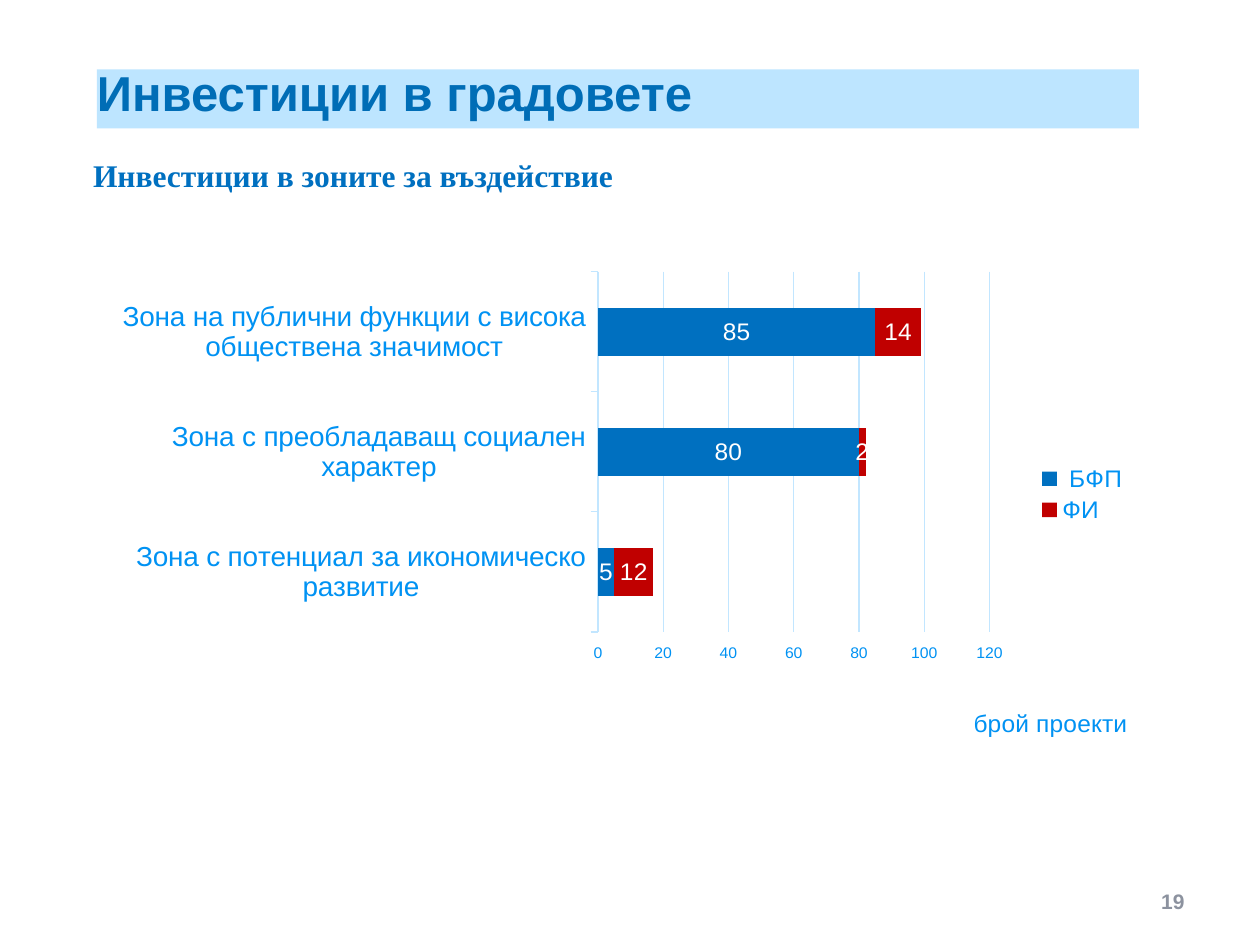
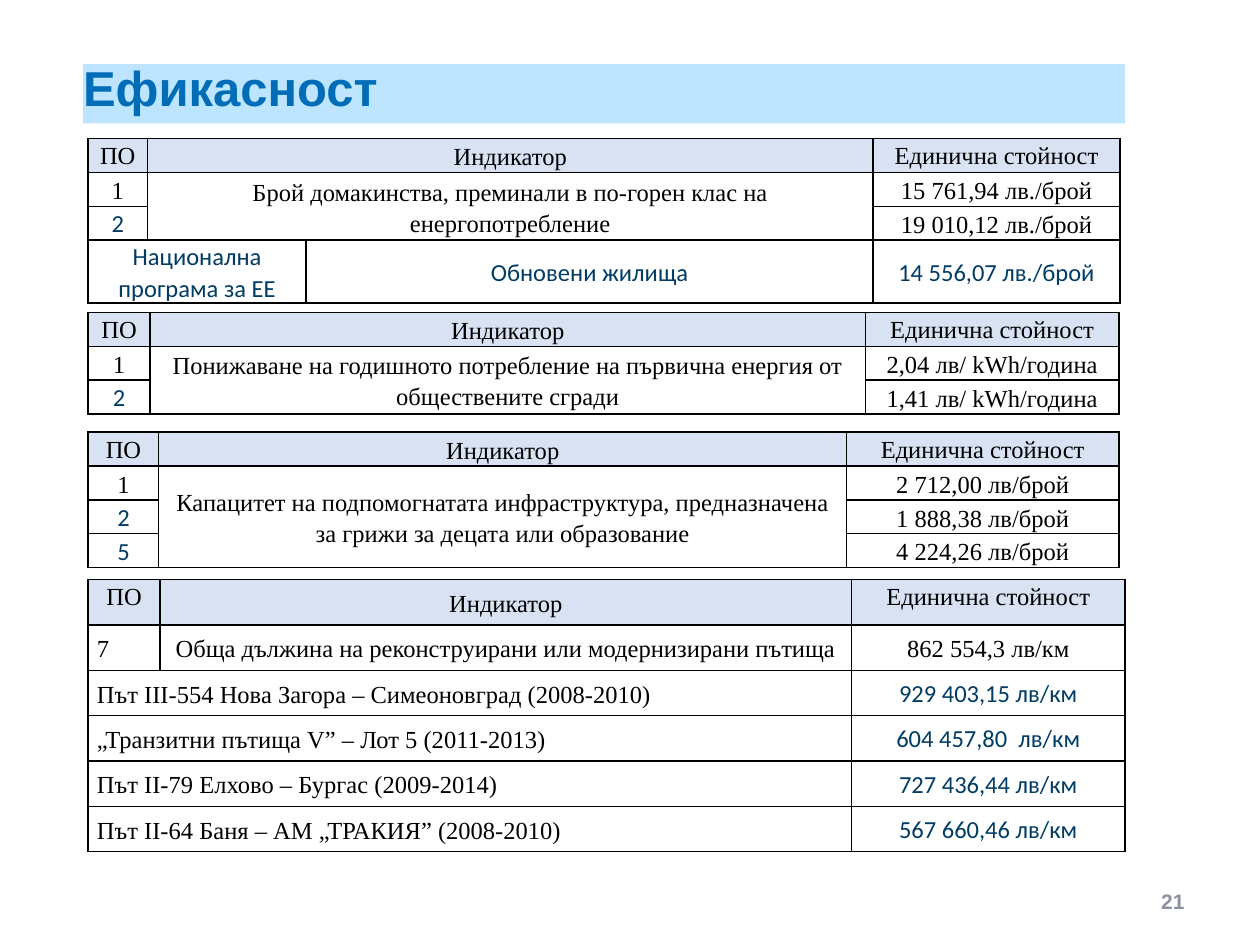
"""Builds two slides on city investments and unit-cost efficiency."""
import pptx
import pptx.chart.data
import pptx.dml.color
import pptx.enum.chart
import pptx.enum.shapes
import pptx.enum.text
import pptx.oxml
import pptx.oxml.ns
import pptx.util

Inches = pptx.util.Inches
Pt = pptx.util.Pt
RGBColor = pptx.dml.color.RGBColor
ALIGN = pptx.enum.text.PP_ALIGN
ANCHOR = pptx.enum.text.MSO_ANCHOR
CHART = pptx.enum.chart

WHITE = RGBColor(0xFF, 0xFF, 0xFF)
BLACK = RGBColor(0, 0, 0)
GREY = RGBColor(0x8C, 0x92, 0x9F)
TITLE_BLUE = RGBColor(0x00, 0x6D, 0xB6)
BAND_BLUE = RGBColor(0xBD, 0xE5, 0xFF)
BLUE = RGBColor(0x00, 0x70, 0xC0)
RED = RGBColor(0xC0, 0x00, 0x00)
AXIS_BLUE = RGBColor(0x00, 0x92, 0xF3)
GRID_BLUE = RGBColor(0xC2, 0xE6, 0xFF)
NAVY = RGBColor(0x00, 0x3C, 0x64)
HEADER_FILL = RGBColor(0xD9, 0xE2, 0xF3)

SANS, SERIF, TABLE_ACCENT = "Arial", "Times New Roman", "Calibri"
HEADINGS = ["ПО", "Индикатор", "Единична стойност"]
TABLE_LEFT = 0.7


def style_font(font, name, size, color, bold=False):
    """Set the face, size, colour and weight of a font."""
    font.name, font.size, font.bold = name, Pt(size), bold
    font.color.rgb = color


def write_text(frame, text, name, size, color, bold=False, align=ALIGN.LEFT):
    """Put one formatted paragraph in a text frame and return it."""
    frame.text = text
    paragraph = frame.paragraphs[0]
    paragraph.alignment = align
    for span in paragraph.runs:
        style_font(span.font, name, size, color, bold)
    return paragraph


def add_text(page, text, left, top, width, height, **style):
    """Add a wrapping text box and return its frame."""
    box = page.shapes.add_textbox(Inches(left), Inches(top), Inches(width), Inches(height))
    box.text_frame.word_wrap = True
    write_text(box.text_frame, text, **style)
    return box.text_frame


def add_page(deck, title, left, top, number):
    """Add a blank page with its title band and page number."""
    page = deck.slides.add_slide(deck.slide_layouts[6])
    frame = add_text(page, number, 7.17, 6.95, 2.33, 0.4, name=SANS, size=12,
                     color=GREY, bold=True, align=ALIGN.RIGHT)
    frame.vertical_anchor = ANCHOR.MIDDLE
    band = page.shapes.add_shape(pptx.enum.shapes.MSO_SHAPE.RECTANGLE,
                                 Inches(left), Inches(top), Inches(8.27), Inches(0.47))
    band.shadow.inherit = False
    band.fill.solid()
    band.fill.fore_color.rgb = BAND_BLUE
    band.line.fill.background()
    frame = band.text_frame
    frame.margin_left = frame.margin_right = frame.margin_top = frame.margin_bottom = 0
    frame.vertical_anchor = ANCHOR.TOP
    write_text(frame, title, SANS, 28, TITLE_BLUE, True).line_spacing = Pt(30)
    return page


def place_chart_part(part, index, inner=False, **fractions):
    """Give a chart part a manual layout in fractions of the chart."""
    for layout in part.findall(pptx.oxml.ns.qn("c:layout")):
        part.remove(layout)
    target = '<c:layoutTarget val="inner"/>' if inner else ""
    modes = "".join(f'<c:{key}Mode val="edge"/>' for key in "xy")
    values = "".join(f'<c:{key} val="{value}"/>' for key, value in fractions.items())
    part.insert(index, pptx.oxml.parse_xml(
        f'<c:layout {pptx.oxml.ns.nsdecls("c")}><c:manualLayout>'
        f'{target}{modes}{values}</c:manualLayout></c:layout>'))


def style_axes(chart):
    """Format the category axis, value axis and grid lines."""
    zones, projects = chart.category_axis, chart.value_axis
    for axis, size in ((zones, 16), (projects, 9)):
        style_font(axis.tick_labels.font, SANS, size, AXIS_BLUE)
        axis.major_tick_mark = CHART.XL_TICK_MARK.OUTSIDE
        axis.minor_tick_mark = CHART.XL_TICK_MARK.NONE
    projects.minimum_scale, projects.maximum_scale, projects.major_unit = 0, 120, 20
    projects.has_major_gridlines = True
    for line in (zones.format.line, projects.major_gridlines.format.line):
        line.color.rgb = GRID_BLUE
        line.width = Pt(0.75)
    projects.format.line.fill.background()
    write_text(projects.axis_title.text_frame, "брой проекти", SANS, 14, AXIS_BLUE)


def add_zone_chart(page):
    """Add the stacked bars of projects by zone and funding."""
    data = pptx.chart.data.CategoryChartData()
    data.categories = ["Зона с потенциал за икономическо развитие",
                       "Зона с преобладаващ социален характер",
                       "Зона на публични функции с висока обществена значимост"]
    data.add_series(" БФП", (5, 80, 85))
    data.add_series("ФИ", (12, 2, 14))
    chart = page.shapes.add_chart(CHART.XL_CHART_TYPE.BAR_STACKED, Inches(0.82), Inches(2.08),
                                  Inches(8.18), Inches(3.83), data).chart
    style_font(chart.font, SANS, 10, NAVY)
    chart.has_title = False
    plot = chart.plots[0]
    plot.gap_width, plot.overlap, plot.vary_by_categories = 150, 100, False
    for series, color in zip(plot.series, (BLUE, RED)):
        series.format.fill.solid()
        series.format.fill.fore_color.rgb = color
        series.data_labels.show_value = True
        style_font(series.data_labels.font, SANS, 14, WHITE)
    style_axes(chart)
    chart.has_legend = True
    chart.legend.position = CHART.XL_LEGEND_POSITION.RIGHT
    chart.legend.include_in_layout = False
    style_font(chart.legend.font, SANS, 14, AXIS_BLUE)
    root = chart.element
    place_chart_part(root.xpath(".//c:plotArea")[0], 0, True, x=0.48, y=0.02, w=0.38, h=0.76)
    place_chart_part(root.xpath(".//c:valAx/c:title")[0], 1, x=0.84, y=0.93)
    place_chart_part(root.xpath(".//c:legend")[0], 1, x=0.9, y=0.42, w=0.1, h=0.14)


def add_borders(cell):
    """Draw a thin black line on all four sides of a cell."""
    properties = cell._tc.get_or_add_tcPr()
    for side in "LRTB":
        properties.append(pptx.oxml.parse_xml(
            f'<a:ln{side} {pptx.oxml.ns.nsdecls("a")} w="{Pt(1)}"><a:solidFill>'
            f'<a:srgbClr val="{BLACK}"/></a:solidFill></a:ln{side}>'))


def add_cost_table(page, top, widths, heights, rows, merges, accents, left_cells=()):
    """Add a unit-cost table; merges hold first and last cell positions."""
    table = page.shapes.add_table(len(rows), len(widths), Inches(TABLE_LEFT), Inches(top),
                                  Inches(sum(widths)), Inches(sum(heights))).table
    for column, width in zip(table.columns, widths):
        column.width = Inches(width)
    for row, height in zip(table.rows, heights):
        row.height = Inches(height)
    for first, last in merges:
        table.cell(*first).merge(table.cell(*last))
    for i, texts in enumerate(rows):
        for j, text in enumerate(texts):
            cell = table.cell(i, j)
            add_borders(cell)
            cell.margin_left = cell.margin_right = Inches(0.07)
            cell.margin_top = cell.margin_bottom = 0
            if i == 0:
                cell.fill.solid()
                cell.fill.fore_color.rgb = HEADER_FILL
            else:
                cell.fill.background()
            cell.vertical_anchor = ANCHOR.TOP if i == 0 and text != "Индикатор" else ANCHOR.MIDDLE
            if not text:
                continue
            accent = (i, j) in accents
            name, color = (TABLE_ACCENT, NAVY) if accent else (SERIF, BLACK)
            align = ALIGN.LEFT if (i, j) in left_cells else ALIGN.CENTER
            paragraph = write_text(cell.text_frame, text, name, 14, color, align=align)
            paragraph.line_spacing = 1.07 if accent else 1.15


def build_investments(deck):
    """Build the page on investments in the impact zones."""
    page = add_page(deck, "Инвестиции в градовете", 0.77, 0.55, "19")
    add_text(page, "Инвестиции в зоните за въздействие", 0.64, 1.19, 8.86, 0.4,
             name=SERIF, size=18, color=BLUE, bold=True)
    add_zone_chart(page)


def build_efficiency(deck):
    """Build the page of unit-cost tables."""
    page = add_page(deck, "Ефикасност", 0.66, 0.51, "21")
    add_cost_table(
        page, 1.1, [0.47, 1.26, 4.5, 1.96], [0.25, 0.25, 0.25, 0.5],
        [["ПО", "Индикатор", "", "Единична стойност"],
         ["1", "Брой домакинства, преминали в по-горен клас на енергопотребление", "",
          "15 761,94 лв./брой"],
         ["2", "", "", "19 010,12 лв./брой"],
         ["Национална програма за ЕЕ", "", "Обновени жилища", "14 556,07 лв./брой"]],
        [((0, 1), (0, 2)), ((1, 1), (2, 2)), ((3, 0), (3, 1))],
        {(2, 0), (3, 0), (3, 2), (3, 3)})
    add_cost_table(
        page, 2.48, [0.49, 5.68, 2.01], [0.25] * 3,
        [HEADINGS,
         ["1", "Понижаване на годишното потребление на първична енергия от обществените сгради",
          "2,04 лв/ kWh/година"],
         ["2", "", "1,41 лв/ kWh/година"]],
        [((1, 1), (2, 1))], {(2, 0)})
    add_cost_table(
        page, 3.43, [0.56, 5.46, 2.16], [0.25] * 4,
        [HEADINGS,
         ["1", "Капацитет на подпомогнатата инфраструктура, предназначена за грижи за децата "
          "или образование", "2 712,00 лв/брой"],
         ["2", "", "1 888,38 лв/брой"],
         ["5", "", "4 224,26 лв/брой"]],
        [((1, 1), (3, 1))], {(2, 0), (3, 0)})
    road_rows = range(2, 6)
    add_cost_table(
        page, 4.6, [0.57, 5.49, 2.17], [0.36] * 6,
        [HEADINGS,
         ["7", "Обща дължина на реконструирани или модернизирани пътища", "862 554,3 лв/км"],
         ["Път ІІІ-554 Нова Загора – Симеоновград (2008-2010)", "", "929 403,15 лв/км"],
         ["„Транзитни пътища V” – Лот 5 (2011-2013)", "", "604 457,80  лв/км"],
         ["Път II-79 Елхово – Бургас (2009-2014)", "", "727 436,44 лв/км"],
         ["Път ІІ-64 Баня – АМ „ТРАКИЯ” (2008-2010)", "", "567 660,46 лв/км"]],
        [((i, 0), (i, 1)) for i in road_rows], {(i, 2) for i in road_rows},
        {(i, 0) for i in range(1, 6)})


def main():
    """Create the deck and save it."""
    deck = pptx.Presentation()
    deck.slide_width, deck.slide_height = Inches(10), Inches(7.5)
    build_investments(deck)
    build_efficiency(deck)
    deck.save("out.pptx")


if __name__ == "__main__":
    main()
